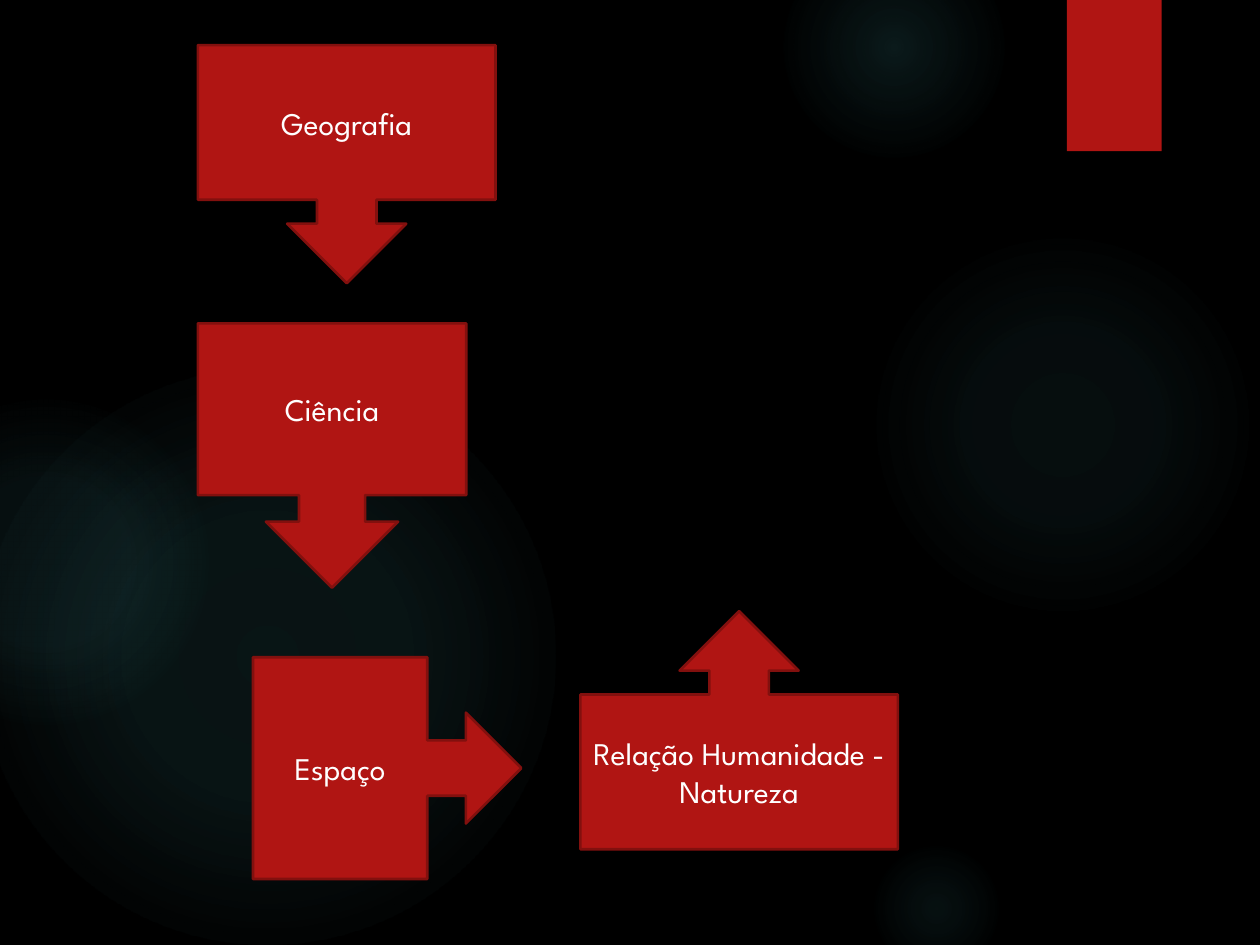
import dataclasses

import pptx
import pptx.dml.color
import pptx.enum.shapes
import pptx.enum.text
import pptx.oxml
import pptx.oxml.ns
import pptx.util

Cm = pptx.util.Cm
Pt = pptx.util.Pt
SHAPE = pptx.enum.shapes.MSO_SHAPE


@dataclasses.dataclass(frozen=True)
class Theme:
    background: str = "000000"
    glow: str = "50B9C1"
    box: str = "B01513"
    border: str = "82100E"
    text: str = "FFFFFF"
    font: str = "League Spartan"
    text_size: int = 18
    border_width: float = 1.5


def rgb(value):
    return pptx.dml.color.RGBColor.from_string(value)


class SlideBuilder:
    """Holds the theme and the current slide."""

    def __init__(self, slide, theme):
        self.s = slide
        self.theme = theme
        fill = slide.background.fill
        fill.solid()
        fill.fore_color.rgb = rgb(theme.background)

    def shape(self, kind, left, top, width, height):
        sp = self.s.shapes.add_shape(kind, Cm(left), Cm(top), Cm(width), Cm(height))
        sp.shadow.inherit = False
        sp.line.fill.background()
        return sp

    def glow(self, left, top, size, stops):
        """Circle fading outwards; stops are (position %, opacity %)."""
        sp = self.shape(SHAPE.OVAL, left, top, size, size)
        sp.fill.background()
        stop_xml = "".join(
            f'<a:gs pos="{pos * 1000}"><a:srgbClr val="{self.theme.glow}">'
            f'<a:alpha val="{opacity * 1000}"/></a:srgbClr></a:gs>'
            for pos, opacity in stops
        )
        gradient = pptx.oxml.parse_xml(
            f'<a:gradFill {pptx.oxml.ns.nsdecls("a")} rotWithShape="1">'
            f"<a:gsLst>{stop_xml}</a:gsLst>"
            '<a:path path="circle">'
            '<a:fillToRect l="50000" t="50000" r="50000" b="50000"/>'
            "</a:path></a:gradFill>"
        )
        spPr = sp._element.spPr
        spPr.replace(spPr.find(pptx.oxml.ns.qn("a:noFill")), gradient)

    def block(self, kind, left, top, width, height):
        sp = self.shape(kind, left, top, width, height)
        sp.fill.solid()
        sp.fill.fore_color.rgb = rgb(self.theme.box)
        return sp

    def callout(self, kind, text, left, top, width, height):
        sp = self.block(kind, left, top, width, height)
        sp.line.color.rgb = rgb(self.theme.border)
        sp.line.width = Pt(self.theme.border_width)
        tf = sp.text_frame
        tf.word_wrap = True
        tf.vertical_anchor = pptx.enum.text.MSO_ANCHOR.MIDDLE
        p = tf.paragraphs[0]
        p.text = text
        p.alignment = pptx.enum.text.PP_ALIGN.CENTER
        p.font.name = self.theme.font
        p.font.size = Pt(self.theme.text_size)
        p.font.color.rgb = rgb(self.theme.text)


# Left, top, diameter in cm, then gradient stops
GLOWS = [
    (17.5, 4.65, 7.82, [(0, 7), (36, 6), (69, 0)]),
    (15.8, -1.27, 4.45, [(0, 14), (36, 7), (73, 0)]),
    (17.5, 16.94, 2.74, [(0, 9), (36, 5), (66, 0)]),
    (-0.43, 7.42, 11.63, [(0, 11), (36, 10), (75, 0)]),
    (-2.34, 8.05, 6.55, [(0, 8), (36, 8), (72, 0)]),
]

# Kind, text, then left, top, width, height in cm
CALLOUTS = [
    (SHAPE.DOWN_ARROW_CALLOUT, "Geografia", 3.99, 0.91, 6, 4.8),
    (SHAPE.DOWN_ARROW_CALLOUT, "Ciência", 3.99, 6.52, 5.41, 5.33),
    (SHAPE.RIGHT_ARROW_CALLOUT, "Espaço", 5.1, 13.25, 5.41, 4.47),
    (SHAPE.UP_ARROW_CALLOUT, "Relação Humanidade - Natureza", 11.7, 12.32, 6.4, 4.8),
]


def main():
    prs = pptx.Presentation()
    prs.slide_width, prs.slide_height = Cm(25.4), Cm(19.05)
    # The slide has no title, so it uses the blank layout
    slide = SlideBuilder(prs.slides.add_slide(prs.slide_layouts[6]), Theme())

    # Background glows
    for glow in GLOWS:
        slide.glow(*glow)

    # Tab at the top right
    slide.block(SHAPE.RECTANGLE, 21.51, 0, 1.91, 3.05)

    # Concept flow
    for callout in CALLOUTS:
        slide.callout(*callout)

    prs.save("out.pptx")


if __name__ == "__main__":
    main()
